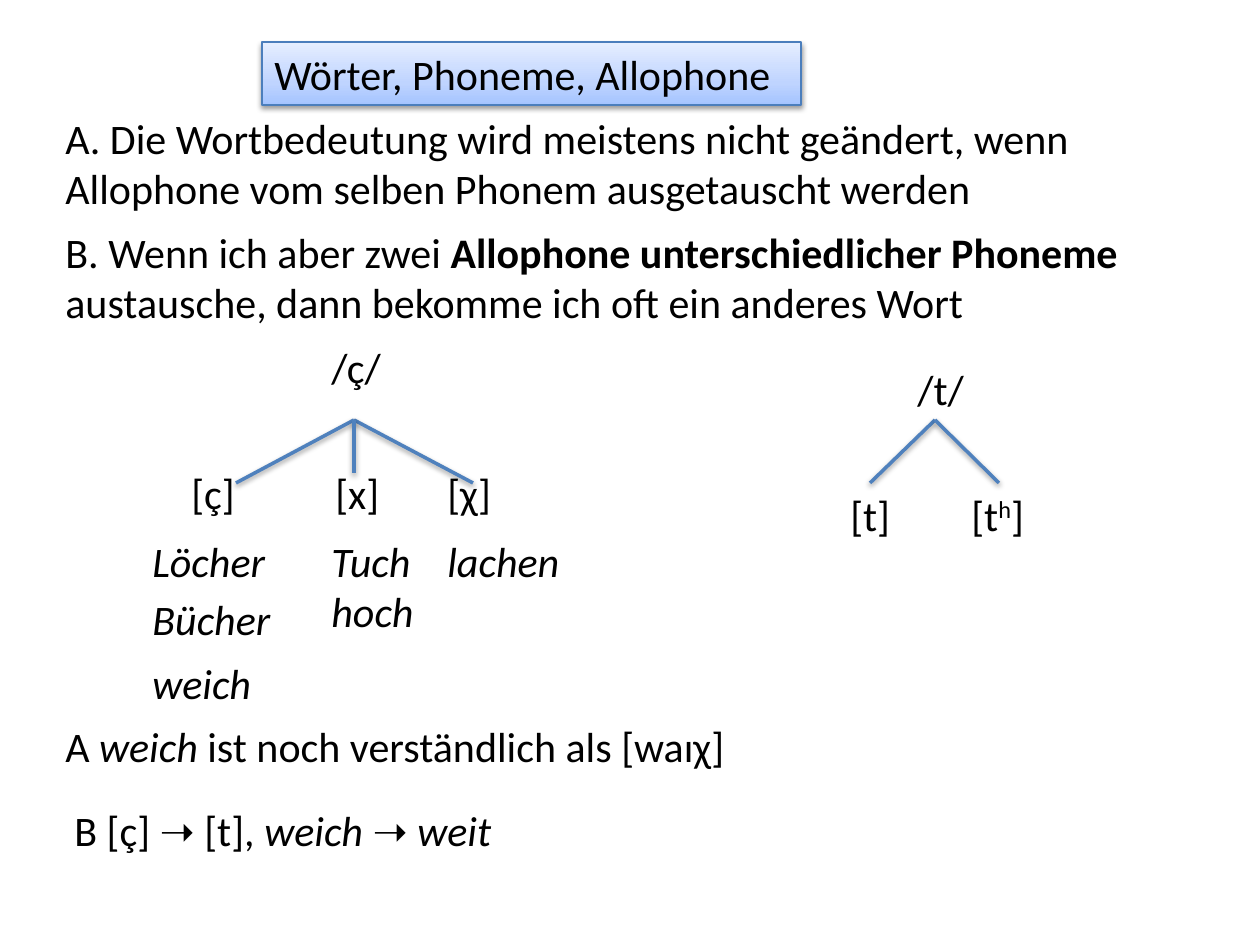
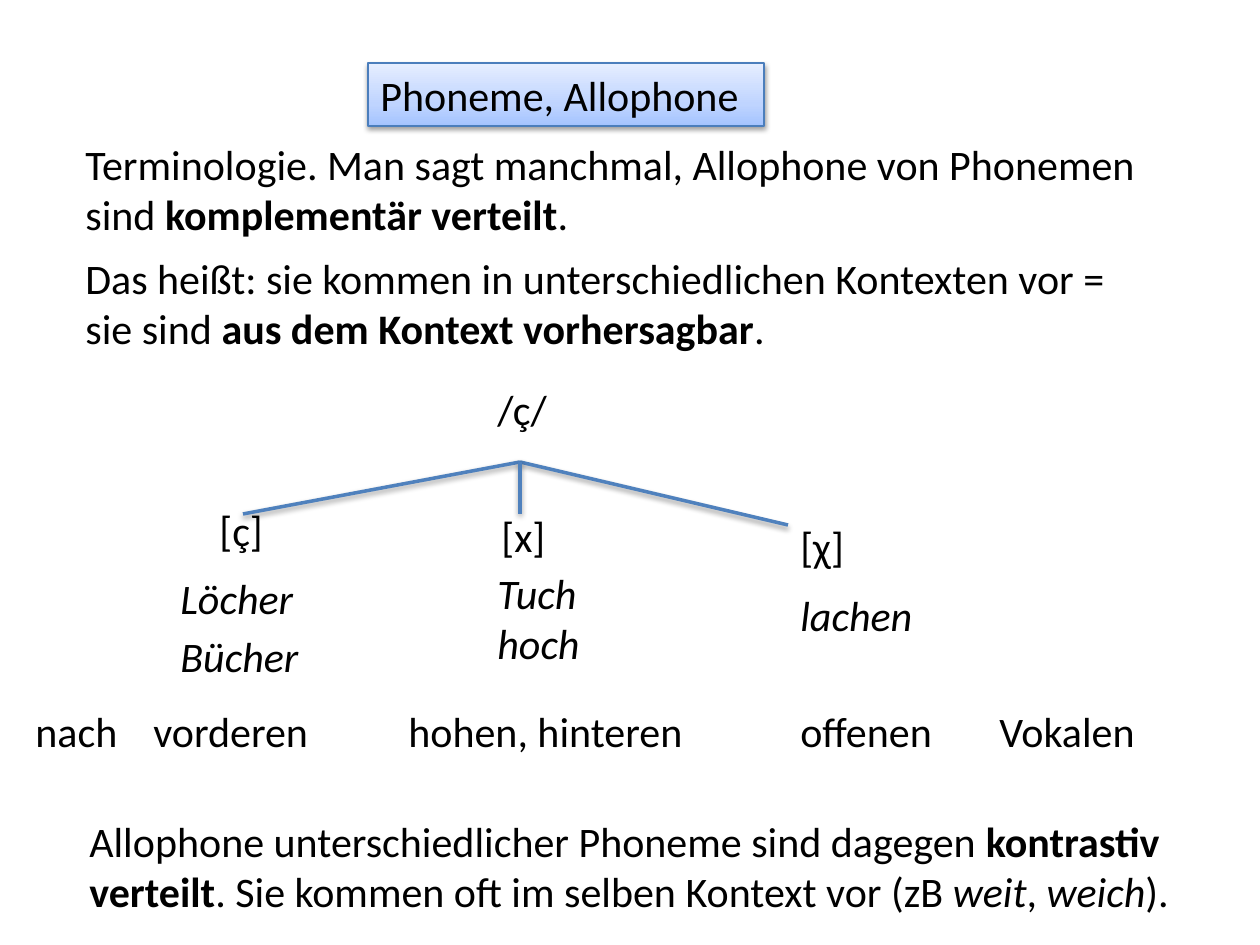
from copy import deepcopy

from pptx import Presentation
from pptx import util as u
from pptx.dml.color import RGBColor
from pptx.enum import shapes, text
from pptx.oxml import parse_xml
from pptx.oxml.ns import nsdecls, qn

PX = 914400 / 126
FONT, SIZE = "Calibri", 24
BLACK, BRANCH, TITLE_EDGE = "000000", "4F81BD", "4B7EBC"
TITLE_GRADIENT = [(0, "A4C4FF"), (0.35, "BFD4FF"), (1, "E6EEFF")]
LINE_HEIGHT, PADDING = 51, 12
WORD_STEP = 58
NARROW = 81  # labels up to this width stay on one line
ROOT_OFFSET = (-35, -85)

# Runs are (text, style): b bold, i italic, s superscript.
# Allophones of /ç/: label, width, offset of the words, [(width, words)]
CH_ALLOPHONES = [
    ("[ç]", 69, -39, [(150, ["Löcher"]), (179, ["Bücher"])]),
    ("[x]", 69, -4, [(116, ["Tuch", "hoch"])]),
    ("[χ]", 116, 0, [(163, ["lachen"])]),
]

# Texts are (left, top, width, lines, runs).
# Columns are (left, top, distance down to the words).
SLIDES = [
    {
        "title": (262, 42, 539, "Wörter, Phoneme, Allophone"),
        "texts": [
            (53, 106, 1050, 2, [("A. Die Wortbedeutung wird meistens nicht geändert, "
                                 "wenn Allophone vom selben Phonem ausgetauscht werden", "")]),
            (53, 220, 1155, 2, [("B. Wenn ich aber zwei ", ""),
                                ("Allophone unterschiedlicher Phoneme ", "b"),
                                ("austausche, dann bekomme ich oft ein anderes Wort", "")]),
            (140, 651, 141, 1, [("weich", "i")]),
            (53, 714, 946, 1, [("A ", ""), ("weich", "i"),
                               (" ist noch verständlich als [waɪχ]", "")]),
            (62, 798, 513, 1, [("B [ç] ➝ [t], ", ""), ("weich", "i"),
                               (" ➝ ", ""), ("weit", "i")]),
            (905, 357, 94, 1, [("/t/", "")]),
            (838, 483, 66, 1, [("[t]", "")]),
            (959, 483, 81, 1, [("[t", ""), ("h", "s"), ("]", "")]),
        ],
        "columns": [(179, 461, 68), (323, 461, 68), (435, 461, 68)],
        "ch_apex": (354, 420),
        "branches": [
            ((354, 420), [(473, 483), (236, 483), (354, 473)]),
            ((935, 420), [(870, 483), (999, 483)]),
        ],
    },
    {
        "title": (368, 63, 396, "Phoneme, Allophone"),
        "texts": [
            (73, 132, 1085, 2, [("Terminologie. Man sagt manchmal, Allophone von Phonemen sind ", ""),
                                ("komplementär verteilt", "b"), (".", "")]),
            (73, 246, 1085, 2, [("Das heißt: sie kommen in unterschiedlichen Kontexten vor = "
                                 "sie sind ", ""),
                                ("aus dem Kontext vorhersagbar", "b"), (".", "")]),
            (77, 809, 1124, 2, [("Allophone unterschiedlicher Phoneme sind dagegen ", ""),
                                ("kontrastiv verteilt", "b"),
                                (". Sie kommen oft im selben Kontext vor (zB ", ""),
                                ("weit", "i"), (", ", ""), ("weich", "i"), (").", "")]),
        ] + [
            (left, 699, width, 1, [(word, "")])
            for left, width, word in [
                (23, 108, "nach"), (141, 204, "vorderen"), (396, 325, "hohen, hinteren"),
                (788, 179, "offenen"), (987, 171, "Vokalen")]
        ],
        "columns": [(207, 498, 68), (489, 504, 57), (788, 514, 69)],
        "ch_apex": (520, 462),
        "branches": [((520, 462), [(788, 525), (243, 514), (520, 514)])],
    },
]


def px(*lengths):
    return [u.Emu(round(length * PX)) for length in lengths]


def color(hex_string):
    return RGBColor.from_string(hex_string)


def add_shadow(shape):
    """Soft shadow straight below; call it after the line is set."""
    shape._element.spPr.append(parse_xml(
        f'<a:effectLst {nsdecls("a")}><a:outerShdw blurRad="40000" dist="20000" '
        f'dir="5400000" rotWithShape="0"><a:srgbClr val="{BLACK}">'
        '<a:alpha val="38000"/></a:srgbClr></a:outerShdw></a:effectLst>'))


def write(shape, paragraphs, wrap=True):
    """Fill a shape with paragraphs, each a list of (text, style) runs."""
    frame = shape.text_frame
    frame.word_wrap = wrap
    frame.auto_size = text.MSO_AUTO_SIZE.SHAPE_TO_FIT_TEXT
    frame.vertical_anchor = text.MSO_ANCHOR.TOP
    for index, runs in enumerate(paragraphs):
        paragraph = frame.add_paragraph() if index else frame.paragraphs[0]
        paragraph.alignment = text.PP_ALIGN.LEFT
        for words, style in runs:
            run = paragraph.add_run()
            run.text = words
            font = run.font
            font.name, font.size = FONT, u.Pt(SIZE)
            font.color.rgb = color(BLACK)
            font.bold, font.italic = style == "b", style == "i"
            if style == "s":
                font._element.set("baseline", "30000")


def add_text(slide, left, top, width, lines, *paragraphs):
    height = lines * LINE_HEIGHT + PADDING
    box = slide.shapes.add_textbox(*px(left, top, width, height))
    write(box, paragraphs, wrap=width > NARROW)


def add_title(slide, left, top, width, words):
    box = slide.shapes.add_shape(shapes.MSO_SHAPE.RECTANGLE,
                                 *px(left, top, width, LINE_HEIGHT + PADDING))
    box.fill.gradient()
    box.fill.gradient_angle = 90
    stops = box._element.spPr.find(qn("a:gradFill")).find(qn("a:gsLst"))
    stops.insert(1, deepcopy(stops[0]))
    for stop, (position, shade) in zip(box.fill.gradient_stops, TITLE_GRADIENT):
        stop.position = position
        stop.color.rgb = color(shade)
    box.line.color.rgb = color(TITLE_EDGE)
    box.line.width = u.Pt(0.75)
    add_shadow(box)
    write(box, [[(words, "")]])


def add_branches(slide, apex, ends):
    for end in ends:
        branch = slide.shapes.add_connector(shapes.MSO_CONNECTOR.STRAIGHT, *px(*apex, *end))
        branch.line.color.rgb = color(BRANCH)
        branch.line.width = u.Pt(2)
        add_shadow(branch)


def add_ch_tree(slide, apex, columns):
    """Phoneme /ç/ with its allophones and their example words."""
    root_left, root_top = (a + offset for a, offset in zip(apex, ROOT_OFFSET))
    add_text(slide, root_left, root_top, 77, 1, [("/ç/", "")])
    for (left, top, gap), (label, width, indent, examples) in zip(columns, CH_ALLOPHONES):
        add_text(slide, left, top, width, 1, [(label, "")])
        for row, (word_width, words) in enumerate(examples):
            add_text(slide, left + indent, top + gap + row * WORD_STEP, word_width,
                     len(words), *[[(word, "i")] for word in words])


def main():
    presentation = Presentation()
    presentation.slide_width, presentation.slide_height = px(1260, 945)
    for content in SLIDES:
        slide = presentation.slides.add_slide(presentation.slide_layouts[6])
        add_title(slide, *content["title"])
        for entry in content["texts"]:
            add_text(slide, *entry)
        add_ch_tree(slide, content["ch_apex"], content["columns"])
        for apex, ends in content["branches"]:
            add_branches(slide, apex, ends)
    presentation.save("out.pptx")


if __name__ == "__main__":
    main()
